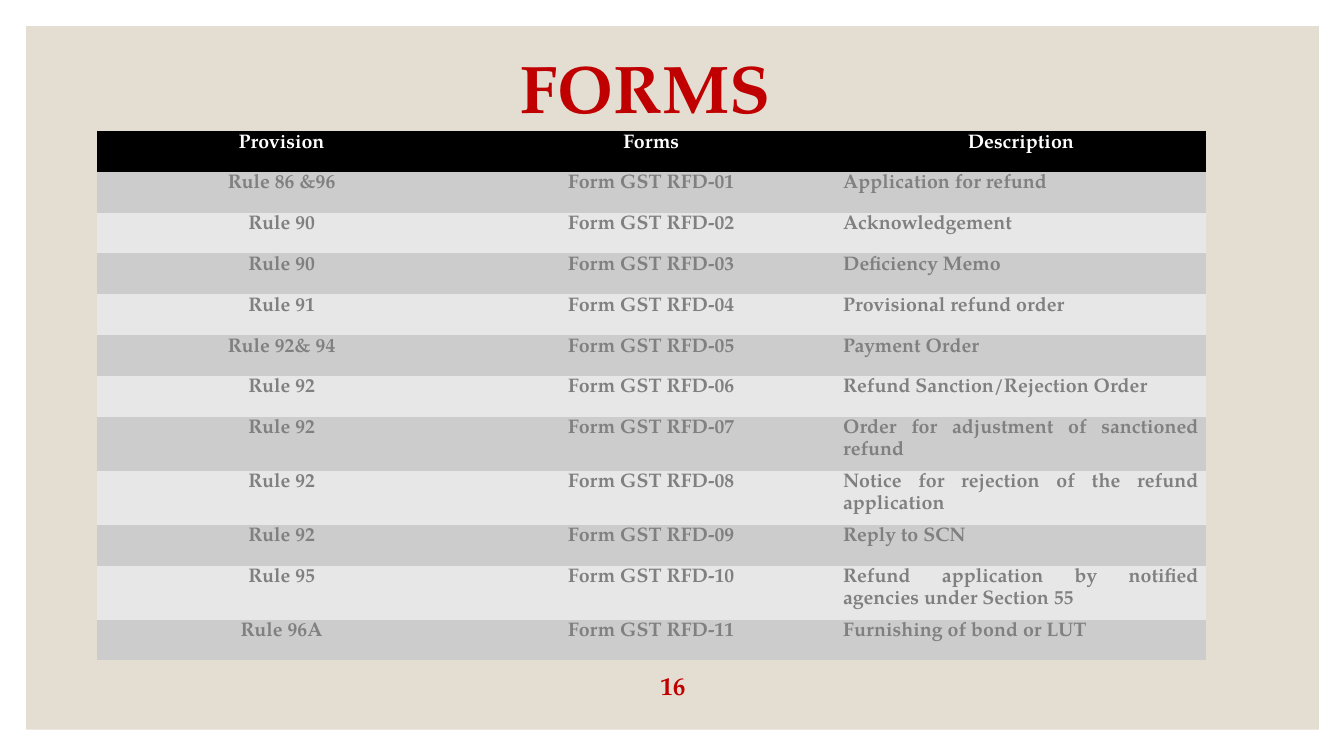
import dataclasses

import pptx
import pptx.dml.color
import pptx.enum.shapes
import pptx.enum.text
import pptx.oxml.ns
import pptx.util

Inches = pptx.util.Inches
ALIGN = pptx.enum.text.PP_ALIGN
ANCHOR = pptx.enum.text.MSO_ANCHOR


@dataclasses.dataclass(frozen=True)
class Theme:
    font: str = "TeX Gyre Pagella"
    panel: str = "E3DED1"
    accent: str = "C00000"
    header_fill: str = "000000"
    header_text: str = "FFFFFF"
    body_text: str = "808080"
    bands: tuple = ("CCCCCC", "E7E7E7")
    title_size: int = 48
    number_size: int = 18
    table_size: int = 14
    plain_table_style: str = "{2D5ABB26-0587-4C30-8999-92F81FD0307C}"


class SlideBuilder:
    def __init__(self, slide, theme):
        self.slide = slide
        self.theme = theme

    def fill(self, target, color):
        target.fill.solid()
        target.fill.fore_color.rgb = pptx.dml.color.RGBColor.from_string(color)

    def add_text(self, frame, text, size, color, align=ALIGN.CENTER, spacing=1.0):
        paragraph = frame.paragraphs[0]
        paragraph.alignment = align
        paragraph.line_spacing = spacing
        run = paragraph.add_run()
        run.text = text
        run.font.name = self.theme.font
        run.font.size = pptx.util.Pt(size)
        run.font.bold = True
        run.font.color.rgb = pptx.dml.color.RGBColor.from_string(color)

    def panel(self, left, top, width, height):
        shape = self.slide.shapes.add_shape(
            pptx.enum.shapes.MSO_SHAPE.RECTANGLE,
            Inches(left), Inches(top), Inches(width), Inches(height))
        shape.shadow.inherit = False
        self.fill(shape, self.theme.panel)
        shape.line.fill.background()

    def text_box(self, left, top, width, height, text, size, anchor=ANCHOR.TOP, spacing=1.0):
        box = self.slide.shapes.add_textbox(
            Inches(left), Inches(top), Inches(width), Inches(height))
        frame = box.text_frame
        frame.word_wrap = True
        frame.vertical_anchor = anchor
        self.add_text(frame, text, size, self.theme.accent, spacing=spacing)

    def table(self, left, top, width, height, rows):
        theme = self.theme
        frame = self.slide.shapes.add_table(
            len(rows), len(rows[0]),
            Inches(left), Inches(top), Inches(width), Inches(height))
        table = frame.table
        style = table._tbl.tblPr.find(pptx.oxml.ns.qn("a:tableStyleId"))
        style.text = theme.plain_table_style
        for row_index, row in enumerate(rows):
            header = row_index == 0
            fill = theme.header_fill if header else theme.bands[(row_index - 1) % 2]
            color = theme.header_text if header else theme.body_text
            for column_index, text in enumerate(row):
                cell = table.cell(row_index, column_index)
                cell.margin_left = cell.margin_right = Inches(0.07)
                cell.margin_top = cell.margin_bottom = 0
                self.fill(cell, fill)
                justified = column_index == 2 and not header
                align = ALIGN.JUSTIFY if justified else ALIGN.CENTER
                self.add_text(cell.text_frame, text, theme.table_size, color, align, 1.15)


FORMS = [
    ("Rule 86 &96", "Application for refund"),
    ("Rule 90", "Acknowledgement"),
    ("Rule 90", "Deficiency Memo"),
    ("Rule 91", "Provisional refund order"),
    ("Rule 92& 94", "Payment Order"),
    ("Rule 92", "Refund Sanction/Rejection Order"),
    ("Rule 92", "Order for adjustment of sanctioned refund"),
    ("Rule 92", "Notice for rejection of the refund application"),
    ("Rule 92", "Reply to SCN"),
    ("Rule 95", "Refund application by notified agencies under Section 55"),
    ("Rule 96A", "Furnishing of bond or LUT"),
]


def main():
    presentation = pptx.Presentation()
    presentation.slide_width = Inches(13.33)
    presentation.slide_height = Inches(7.5)
    theme = Theme()
    builder = SlideBuilder(
        presentation.slides.add_slide(presentation.slide_layouts[6]), theme)
    builder.panel(0.26, 0.26, 12.82, 6.98)
    builder.text_box(0.9, 0.16, 11, 1.5, "FORMS", theme.title_size, ANCHOR.MIDDLE, 0.9)
    rows = [("Provision", "Forms", "Description")]
    rows += [(rule, f"Form GST RFD-{number:02}", description)
             for number, (rule, description) in enumerate(FORMS, 1)]
    builder.table(0.96, 1.3, 11, 4.86, rows)
    builder.text_box(2.7, 6.6, 7.95, 0.4, "16", theme.number_size)
    presentation.save("out.pptx")


if __name__ == "__main__":
    main()
